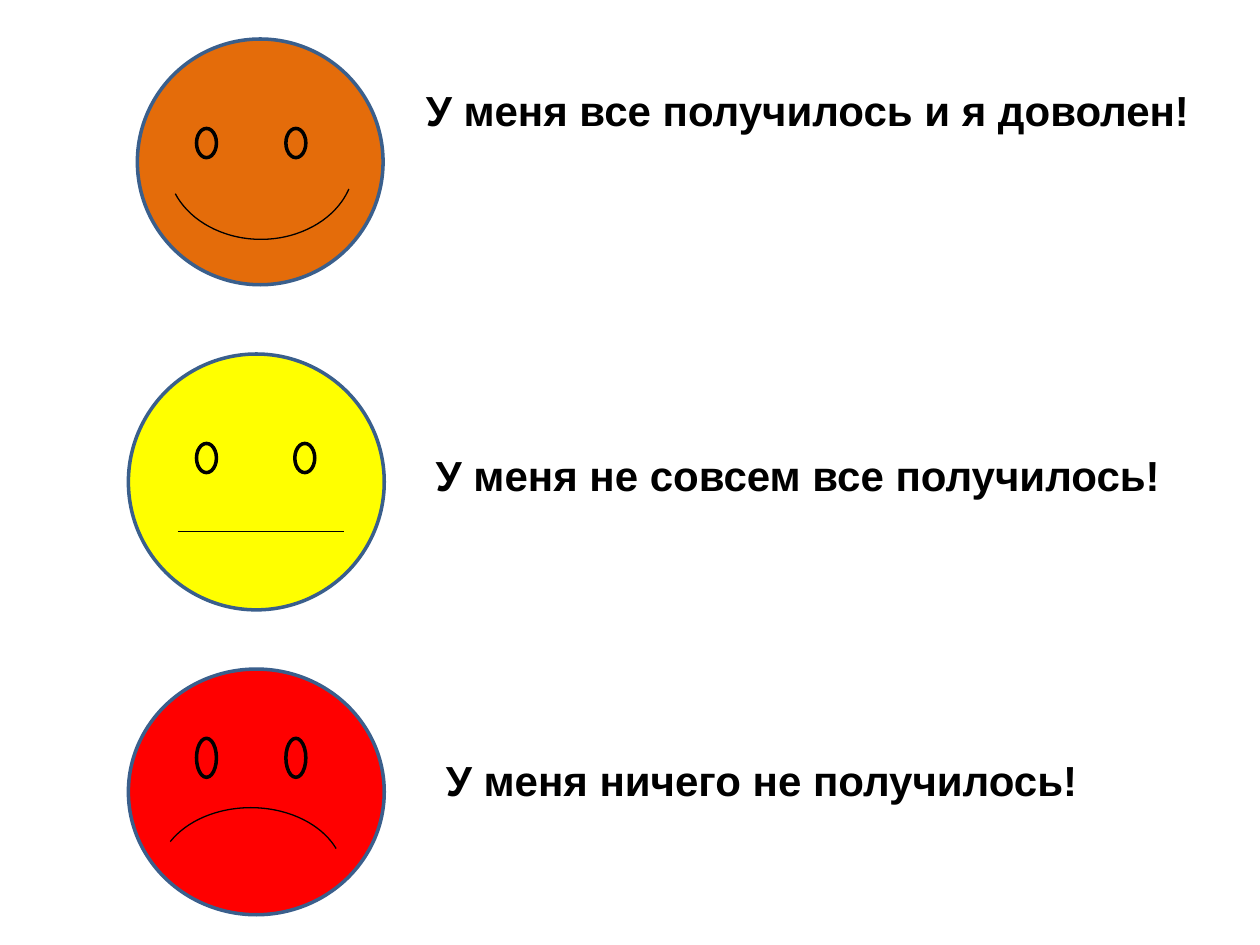
from lxml import etree
from pptx import Presentation
from pptx.dml.color import RGBColor
from pptx.enum.shapes import MSO_CONNECTOR as Link, MSO_SHAPE as Kind
from pptx.enum.text import MSO_AUTO_SIZE as Fit
from pptx.oxml.ns import qn
from pptx.util import Pt

INK, RIM = "000000", "3A5F8C"


def color(code):
    return RGBColor.from_string(code)


def text(slide, words, x, y, w, h, size=24, bold=True, font="Arial", ink=INK):
    frame = slide.shapes.add_textbox(Pt(x), Pt(y), Pt(w), Pt(h)).text_frame
    frame.word_wrap = True
    frame.auto_size = Fit.SHAPE_TO_FIT_TEXT
    run = frame.paragraphs[0].add_run()
    run.text = words
    run.font.name, run.font.size, run.font.bold = font, Pt(size), bold
    run.font.color.rgb = color(ink)


def shape(slide, kind, x, y, w, h, fill=None, line=INK, width=2):
    part = slide.shapes.add_shape(kind, Pt(x), Pt(y), Pt(w), Pt(h))
    part.shadow.inherit = False
    if fill:
        part.fill.solid()
        part.fill.fore_color.rgb = color(fill)
    else:
        part.fill.background()
    part.line.color.rgb = color(line)
    part.line.width = Pt(width)
    return part


def mouth(slide, x, y, w, h, arc):
    """Draw an arc between two angles in degrees, or a flat line."""
    if arc:
        curve = shape(slide, Kind.ARC, x, y, w, h, width=0.75)
        for i, angle in enumerate(arc):
            curve.adjustments[i] = angle * 0.6  # 60000 units a degree
    else:
        flat = slide.shapes.add_connector(
            Link.STRAIGHT, Pt(x), Pt(y), Pt(x + w), Pt(y + h))
        flat.line.color.rgb = color(INK)
        flat.line.width = Pt(0.75)
        etree.SubElement(flat._element.spPr, qn("a:effectLst"))


def face(slide, x, y, w, h, fill, eyes, lips, arc=None):
    shape(slide, Kind.OVAL, x, y, w, h, fill, RIM)
    # Eyes: two left edges, then top and height
    left, right, top, tall = eyes
    for dx in (left, right):
        shape(slide, Kind.OVAL, x + dx, y + top, 11.4, tall, fill)
    # Mouth
    dx, dy, wide, deep = lips
    mouth(slide, x + dx, y + dy, wide, deep, arc)


# Each row: face box, colour, eyes, mouth box, mouth angles, label and its place
ROWS = [
    ((78.5, 0, 140.4, 140.4), "E46C0A", (33.8, 84.9, 51.1, 16.7),
     (17.3, 28.1, 106.6, 86.4), (16, 160.7),
     "У меня все получилось и я доволен!", (236.2, 22.3)),
    ((73.4, 0, 146.2, 146.2), "FFFF00", (38.9, 95.1, 51.1, 16.7),
     (28.1, 101.5, 95.1, 0), None,
     "У меня не совсем все получилось!", (241.9, 51.1)),
    ((73.4, 0, 146.2, 140.4), "FF0000", (38.9, 90, 39.6, 22.3),
     (16.6, 79.2, 106.6, 78.5), (203.3, 342),
     "У меня ничего не получилось!", (247.7, 45.3)),
]


def main():
    deck = Presentation()
    deck.slide_width, deck.slide_height = Pt(720), Pt(540)
    slide = deck.slides.add_slide(deck.slide_layouts[6])
    for i, (box, fill, eyes, lips, arc, words, spot) in enumerate(ROWS):
        top = 22.3 + i * 180
        x, y, w, h = box
        face(slide, x, top + y, w, h, fill, eyes, lips, arc)
        text(slide, words, spot[0], top + spot[1], 461.5, 36.7)
    deck.save("out.pptx")


if __name__ == "__main__":
    main()
